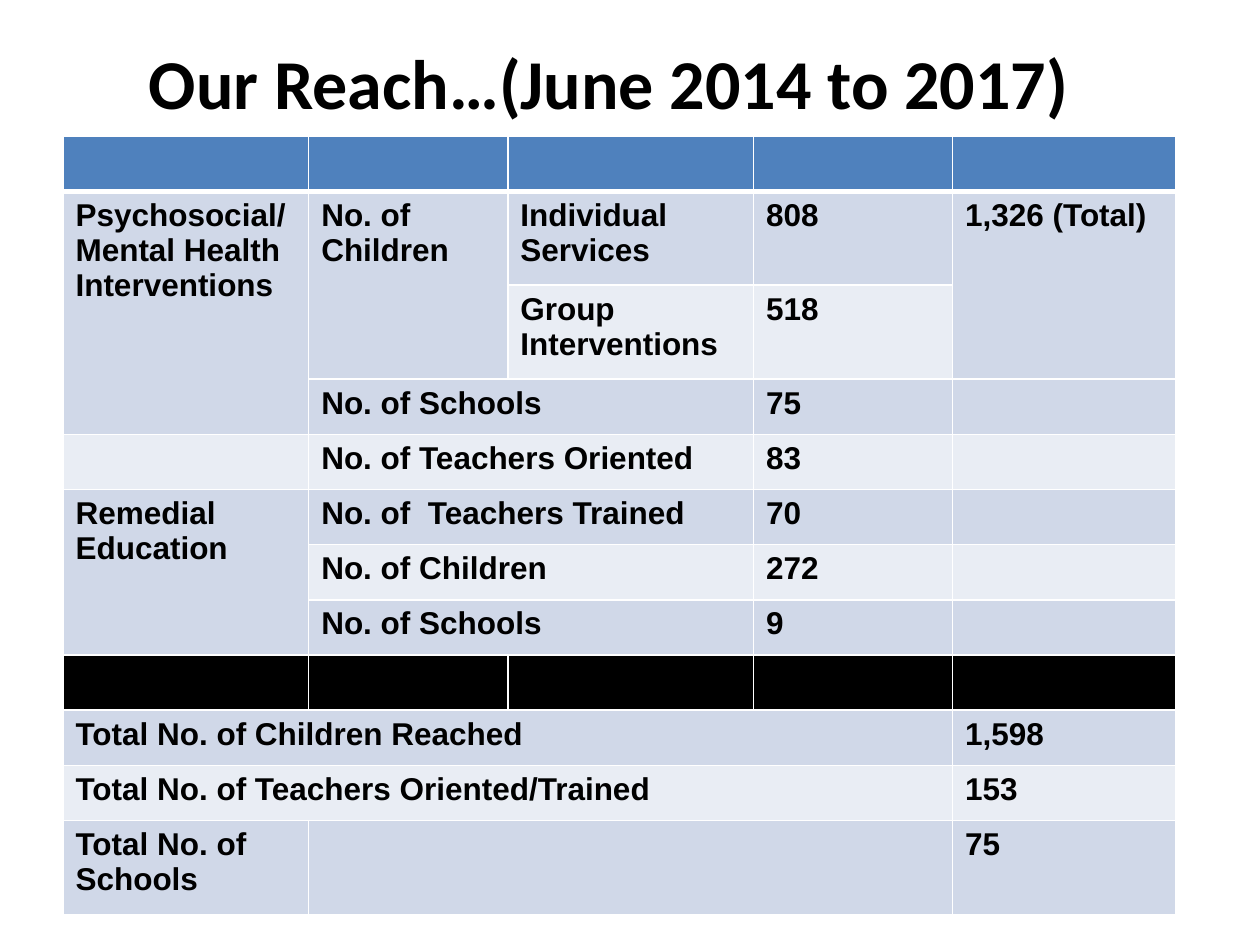
from dataclasses import dataclass

from lxml import etree
from pptx import Presentation
from pptx import util as u
from pptx.dml.color import RGBColor
from pptx.enum import text
from pptx.oxml import ns


@dataclass(frozen=True)
class Theme:
    ink: str = "000000"
    header: str = "4F81BD"
    bands: tuple[str, str] = ("D0D8E8", "E9EDF4")
    rule: str = "FFFFFF"
    title_font: str = "Calibri"
    body_font: str = "Arial"
    title_size: int = 40
    body_size: int = 18
    thin: int = 1
    thick: int = 3


@dataclass(frozen=True)
class Entry:
    row: int
    col: int
    label: str = ""
    rows: int = 1
    cols: int = 1


THEME = Theme()
WIDTH, HEIGHT = u.Inches(10), u.Inches(7.5)
COLUMNS = (1.95, 1.58, 1.95, 1.58, 1.77)
SHORT, TALL = 0.44, 0.75
TALL_ROWS = (1, 2, 11)
ROW_COUNT = 12
HEADER_ROW, DIVIDER_ROW = 0, 8

ENTRIES = (
    Entry(1, 0, "Psychosocial/ Mental Health Interventions", rows=3),
    Entry(1, 1, "No. of Children", rows=2),
    Entry(1, 2, "Individual Services"),
    Entry(1, 3, "808"),
    Entry(1, 4, "1,326 (Total)", rows=2),
    Entry(2, 2, "Group Interventions"),
    Entry(2, 3, "518"),
    Entry(3, 1, "No. of Schools", cols=2),
    Entry(3, 3, "75"),
    Entry(4, 1, "No. of Teachers Oriented", cols=2),
    Entry(4, 3, "83"),
    Entry(5, 0, "Remedial Education", rows=3),
    Entry(5, 1, "No. of  Teachers Trained", cols=2),
    Entry(5, 3, "70"),
    Entry(6, 1, "No. of Children", cols=2),
    Entry(6, 3, "272"),
    Entry(7, 1, "No. of Schools", cols=2),
    Entry(7, 3, "9"),
    Entry(9, 0, "Total No. of Children Reached", cols=4),
    Entry(9, 4, "1,598"),
    Entry(10, 0, "Total No. of Teachers Oriented/Trained", cols=4),
    Entry(10, 4, "153"),
    Entry(11, 0, "Total No. of Schools"),
    Entry(11, 1, cols=3),
    Entry(11, 4, "75"),
)


def style_text(p, font: str, size: int) -> None:
    p.font.name = font
    p.font.size = u.Pt(size)
    p.font.bold = True
    p.font.color.rgb = RGBColor.from_string(THEME.ink)


def row_fill(row: int) -> str:
    if row == HEADER_ROW:
        return THEME.header
    if row == DIVIDER_ROW:
        return THEME.ink
    return THEME.bands[(row - 1) % 2]


def add_borders(cell, row: int) -> None:
    tc_pr = cell._tc.get_or_add_tcPr()
    heavy = {"lnB": HEADER_ROW, "lnT": HEADER_ROW + 1}
    for side in ("lnL", "lnR", "lnT", "lnB"):
        weight = THEME.thick if heavy.get(side) == row else THEME.thin
        ln = etree.SubElement(tc_pr, ns.qn(f"a:{side}"), w=str(u.Pt(weight)))
        fill = etree.SubElement(ln, ns.qn("a:solidFill"))
        etree.SubElement(fill, ns.qn("a:srgbClr"), val=THEME.rule)


def add_title(s, label: str) -> None:
    sp = s.shapes.title
    sp.left, sp.top = int(WIDTH * 0.033), int(HEIGHT * 0.023)
    sp.width, sp.height = int(WIDTH * 0.9), int(HEIGHT * 0.127)
    tf = sp.text_frame
    tf.text = label
    tf.vertical_anchor = text.MSO_ANCHOR.MIDDLE
    p = tf.paragraphs[0]
    p.alignment = text.PP_ALIGN.CENTER
    style_text(p, THEME.title_font, THEME.title_size)


def add_reach_table(s) -> None:
    left, top = int(WIDTH * 0.05), int(HEIGHT * 0.144)
    width, height = u.Inches(sum(COLUMNS)), int(HEIGHT * 0.824)
    shares = [TALL if i in TALL_ROWS else SHORT for i in range(ROW_COUNT)]
    table = s.shapes.add_table(
        ROW_COUNT, len(COLUMNS), left, top, width, height
    ).table
    for column, inches in zip(table.columns, COLUMNS):
        column.width = u.Inches(inches)
    for i, (row, share) in enumerate(zip(table.rows, shares)):
        row.height = int(height * share / sum(shares))
        for cell in row.cells:
            add_borders(cell, i)
            cell.fill.solid()
            cell.fill.fore_color.rgb = RGBColor.from_string(row_fill(i))
            style_text(
                cell.text_frame.paragraphs[0], THEME.body_font, THEME.body_size
            )
    for e in ENTRIES:
        cell = table.cell(e.row, e.col)
        if e.rows > 1 or e.cols > 1:
            cell.merge(table.cell(e.row + e.rows - 1, e.col + e.cols - 1))
        if e.label:
            p = cell.text_frame.paragraphs[0]
            p.text = e.label
            style_text(p, THEME.body_font, THEME.body_size)


def main() -> None:
    prs = Presentation()
    prs.slide_width, prs.slide_height = WIDTH, HEIGHT
    s = prs.slides.add_slide(prs.slide_layouts.get_by_name("Title Only"))
    add_title(s, "Our Reach…(June 2014 to 2017)")
    add_reach_table(s)
    prs.save("out.pptx")


if __name__ == "__main__":
    main()
